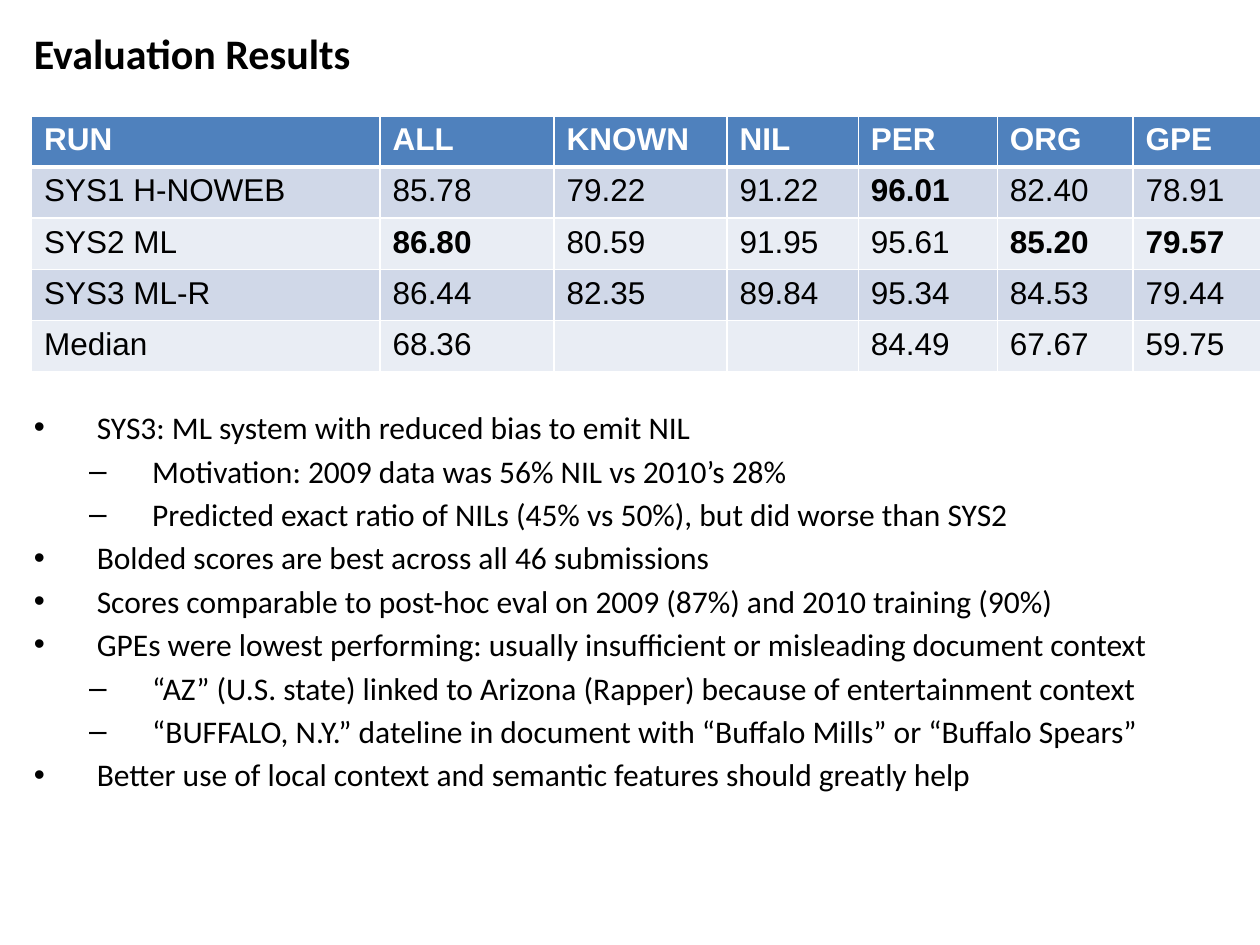
from dataclasses import dataclass

from lxml.etree import SubElement
from pptx import Presentation
from pptx.dml.color import RGBColor
from pptx.enum.text import MSO_ANCHOR
from pptx.oxml.ns import qn
from pptx.util import Inches, Pt


@dataclass(frozen=True)
class Theme:
    body_font: str = "Calibri"
    table_font: str = "Arial"
    title_size: float = 24
    text_size: float = 18
    paragraph_gap: float = 3.2
    black: str = "000000"
    white: str = "FFFFFF"
    header: str = "4F81BD"
    bands: tuple = ("D0D8E8", "E9EDF4")
    thin_border: float = 1
    thick_border: float = 3


@dataclass(frozen=True)
class Box:
    """A frame given as shares of the slide's width and height."""
    left: float
    top: float
    width: float
    height: float


@dataclass(frozen=True)
class Bullet:
    text: str
    level: int = 0


@dataclass(frozen=True)
class Level:
    mark: str
    margin: float


THEME = Theme()
SLIDE_WIDTH, SLIDE_HEIGHT = Inches(10), Inches(7.5)
TITLE_BOX = Box(0.017, 0.17 / 7.5, 0.8, 0.5 / 7.5)
TABLE_BOX = Box(0.025, 0.92 / 7.5, 0.94, 2.03 / 7.5)
BULLET_BOX = Box(0.017, 3.19 / 7.5, 0.95, 3.3 / 7.5)

HANGING_INDENT = 0.5
LEVELS = (Level("•", 0.5), Level("–", 0.94))

COLUMN_SHARES = (2.77, 1.2, 1.19, 0.9, 0.98, 0.98, 1.39)
RESULTS = (
    ("RUN", "ALL", "KNOWN", "NIL", "PER", "ORG", "GPE"),
    ("SYS1 H-NOWEB", "85.78", "79.22", "91.22", "96.01", "82.40", "78.91"),
    ("SYS2 ML", "86.80", "80.59", "91.95", "95.61", "85.20", "79.57"),
    ("SYS3 ML-R", "86.44", "82.35", "89.84", "95.34", "84.53", "79.44"),
    ("Median", "68.36", "", "", "84.49", "67.67", "59.75"),
)
BEST_SCORES = {"96.01", "86.80", "85.20", "79.57"}

BULLETS = (
    Bullet("SYS3: ML system with reduced bias to emit NIL"),
    Bullet("Motivation: 2009 data was 56% NIL vs 2010’s 28%", 1),
    Bullet("Predicted exact ratio of NILs (45% vs 50%), but did worse than SYS2", 1),
    Bullet("Bolded scores are best across all 46 submissions"),
    Bullet("Scores comparable to post-hoc eval on 2009 (87%) and 2010 training (90%)"),
    Bullet("GPEs were lowest performing: usually insufficient or misleading document context"),
    Bullet("“AZ” (U.S. state) linked to Arizona (Rapper) because of entertainment context", 1),
    Bullet("“BUFFALO, N.Y.” dateline in document with “Buffalo Mills” or “Buffalo Spears”", 1),
    Bullet("Better use of local context and semantic features should greatly help"),
)


def frame(box: Box) -> tuple:
    return (int(SLIDE_WIDTH * box.left), int(SLIDE_HEIGHT * box.top),
            int(SLIDE_WIDTH * box.width), int(SLIDE_HEIGHT * box.height))


def format_runs(paragraph, font_name: str, size: float, color: str, bold: bool = False) -> None:
    for run in paragraph.runs:
        run.font.name = font_name
        run.font.size = Pt(size)
        run.font.bold = bold
        run.font.color.rgb = RGBColor.from_string(color)


def add_text_frame(slide, box: Box):
    text_frame = slide.shapes.add_textbox(*frame(box)).text_frame
    text_frame.word_wrap = True
    return text_frame


def add_title(slide, text: str) -> None:
    text_frame = add_text_frame(slide, TITLE_BOX)
    text_frame.vertical_anchor = MSO_ANCHOR.MIDDLE
    text_frame.text = text
    format_runs(text_frame.paragraphs[0], THEME.body_font, THEME.title_size, THEME.black, True)


def add_bullets(slide, bullets: tuple) -> None:
    text_frame = add_text_frame(slide, BULLET_BOX)
    for index, bullet in enumerate(bullets):
        paragraph = text_frame.add_paragraph() if index else text_frame.paragraphs[0]
        paragraph.text = bullet.text
        paragraph.level = bullet.level
        level = LEVELS[bullet.level]
        properties = paragraph._p.get_or_add_pPr()
        properties.set("marL", str(Inches(level.margin)))
        properties.set("indent", str(-Inches(HANGING_INDENT)))
        SubElement(properties, qn("a:buFont"), typeface="Arial")
        SubElement(properties, qn("a:buChar"), char=level.mark)
        if index:
            paragraph.space_before = Pt(THEME.paragraph_gap)
        format_runs(paragraph, THEME.body_font, THEME.text_size, THEME.black)


def add_borders(cell, top: float, bottom: float) -> None:
    widths = {"L": THEME.thin_border, "R": THEME.thin_border, "T": top, "B": bottom}
    properties = cell._tc.get_or_add_tcPr()
    for side, width in widths.items():
        line = SubElement(properties, qn(f"a:ln{side}"), w=str(Pt(width)))
        fill = SubElement(line, qn("a:solidFill"))
        SubElement(fill, qn("a:srgbClr"), val=THEME.white)


def add_results_table(slide, rows: tuple) -> None:
    shape = slide.shapes.add_table(len(rows), len(rows[0]), *frame(TABLE_BOX))
    table = shape.table
    table.horz_banding = False
    for column, share in zip(table.columns, COLUMN_SHARES):
        column.width = int(shape.width * share / sum(COLUMN_SHARES))

    for row_index, row in enumerate(rows):
        is_header = row_index == 0
        background = THEME.header if is_header else THEME.bands[(row_index - 1) % 2]
        color = THEME.white if is_header else THEME.black
        top = THEME.thick_border if row_index == 1 else THEME.thin_border
        bottom = THEME.thick_border if is_header else THEME.thin_border
        for column_index, text in enumerate(row):
            cell = table.cell(row_index, column_index)
            add_borders(cell, top, bottom)
            cell.fill.solid()
            cell.fill.fore_color.rgb = RGBColor.from_string(background)
            cell.text_frame.text = text
            format_runs(cell.text_frame.paragraphs[0], THEME.table_font, THEME.text_size,
                        color, is_header or text in BEST_SCORES)


def main() -> None:
    presentation = Presentation()
    presentation.slide_width = SLIDE_WIDTH
    presentation.slide_height = SLIDE_HEIGHT
    slide = presentation.slides.add_slide(presentation.slide_layouts[6])

    # Heading, findings and scores
    add_title(slide, "Evaluation Results")
    add_bullets(slide, BULLETS)
    add_results_table(slide, RESULTS)

    presentation.save("out.pptx")


if __name__ == "__main__":
    main()
